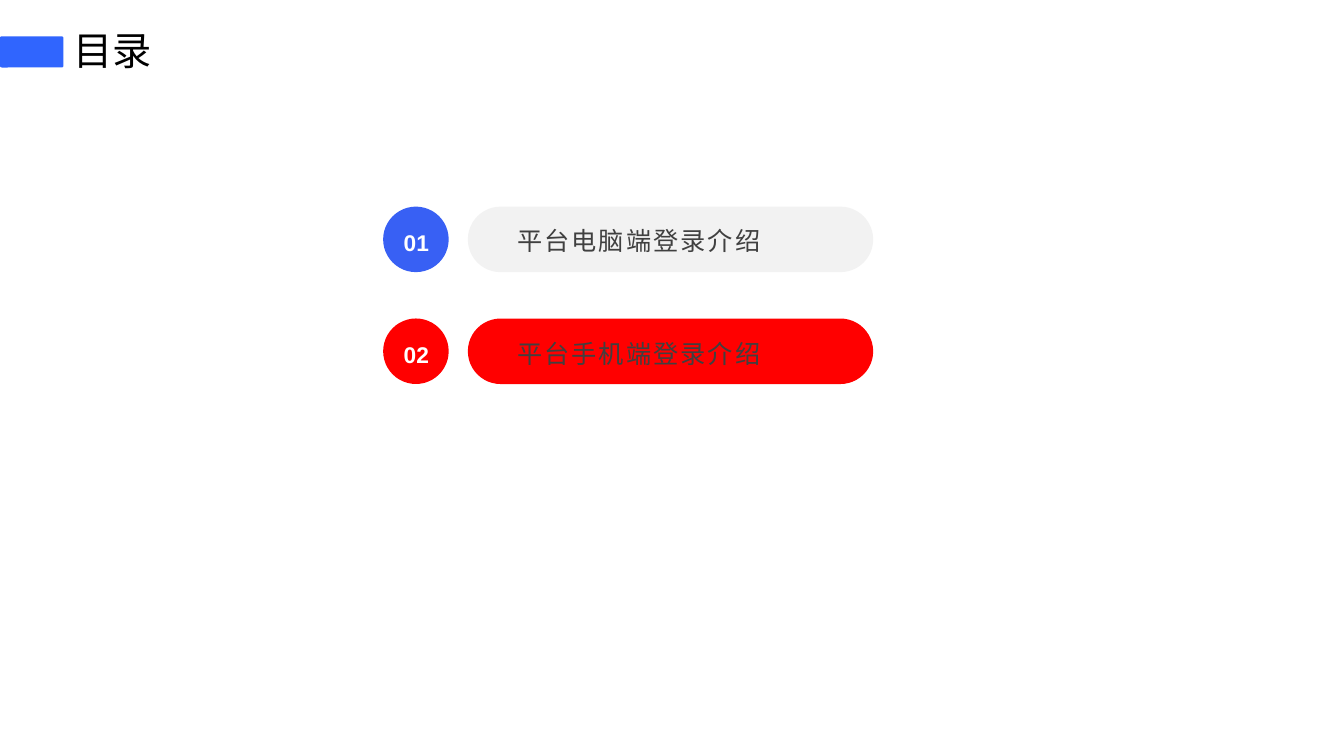
from lxml import etree
from pptx import Presentation
from pptx.dml.color import RGBColor
from pptx.enum.shapes import MSO_SHAPE
from pptx.enum.text import MSO_ANCHOR, PP_ALIGN
from pptx.oxml.ns import qn
from pptx.util import Inches, Pt

OVAL, ROUND = MSO_SHAPE.OVAL, MSO_SHAPE.ROUNDED_RECTANGLE
MIDDLE = MSO_ANCHOR.MIDDLE
LEFT, CENTER = PP_ALIGN.LEFT, PP_ALIGN.CENTER
SANS, ARIAL = "Noto Sans CJK SC", "Arial"

TITLE = "目录"
ITEMS = [
    dict(num="01", text="平台电脑端登录介绍", dot="3860F4", bar="F2F2F2",
         face=SANS, drop=-0.01, wide=3.69, high=0.62),
    dict(num="02", text="平台手机端登录介绍", dot="FF0000", bar="FF0000",
         face=ARIAL, drop=0.03, wide=3.41, high=0.58),
]
TOP, STEP, SIZE = 2.05, 1.11, 0.65


def color(value):
    return RGBColor.from_string(value)


def place(box):
    return [Inches(v) for v in box]


def draw(kind, box, fill, round_by=None):
    shape = slide.shapes.add_shape(kind, *place(box))
    shape.shadow.inherit = False
    shape.fill.solid()
    shape.fill.fore_color.rgb = color(fill)
    shape.line.fill.background()
    if round_by is not None:
        shape.adjustments[0] = round_by


def write(text, box, holder=None, size=18, face=SANS, ink="404040",
          bold=False, align=LEFT, lead=1.2, space=0, wrap=True):
    if holder is None:
        holder = slide.shapes.add_textbox(*place(box))
    else:
        holder.left, holder.top, holder.width, holder.height = place(box)
    frame = holder.text_frame
    frame.word_wrap = wrap
    frame.vertical_anchor = MIDDLE
    para = frame.paragraphs[0]
    para.alignment, para.line_spacing = align, lead
    para.space_before = Pt(0)
    run = para.add_run()
    run.text = text
    font = run.font
    font.size, font.name, font.bold = Pt(size), face, bold
    font.color.rgb = color(ink)
    props = run._r.get_or_add_rPr()
    etree.SubElement(props, qn("a:ea")).set("typeface", face)
    if space:
        props.set("spc", str(int(space * 100)))


deck = Presentation()
deck.slide_width, deck.slide_height = Inches(13.33), Inches(7.5)
slide = deck.slides.add_slide(deck.slide_layouts[5])

draw(ROUND, (0, 0.36, 0.63, 0.31), "3065FE", 0.06)
write(TITLE, (0.63, 0.26, 9.24, 0.52), holder=slide.shapes.title,
      size=28, ink="000000", lead=0.9)

for i, item in enumerate(ITEMS):
    y = TOP + i * STEP
    draw(OVAL, (3.8, y, SIZE, SIZE), item["dot"])
    draw(ROUND, (4.64, y, 4.02, SIZE), item["bar"], 0.5)
    write(item["text"], (5.03, y + item["drop"], item["wide"], item["high"]),
          face=item["face"], space=1.5)
    write(item["num"], (3.9, y + 0.12, 0.46, 0.42), size=16.2, face=ARIAL,
          ink="FFFFFF", bold=True, align=CENTER, wrap=False)

deck.save("out.pptx")
